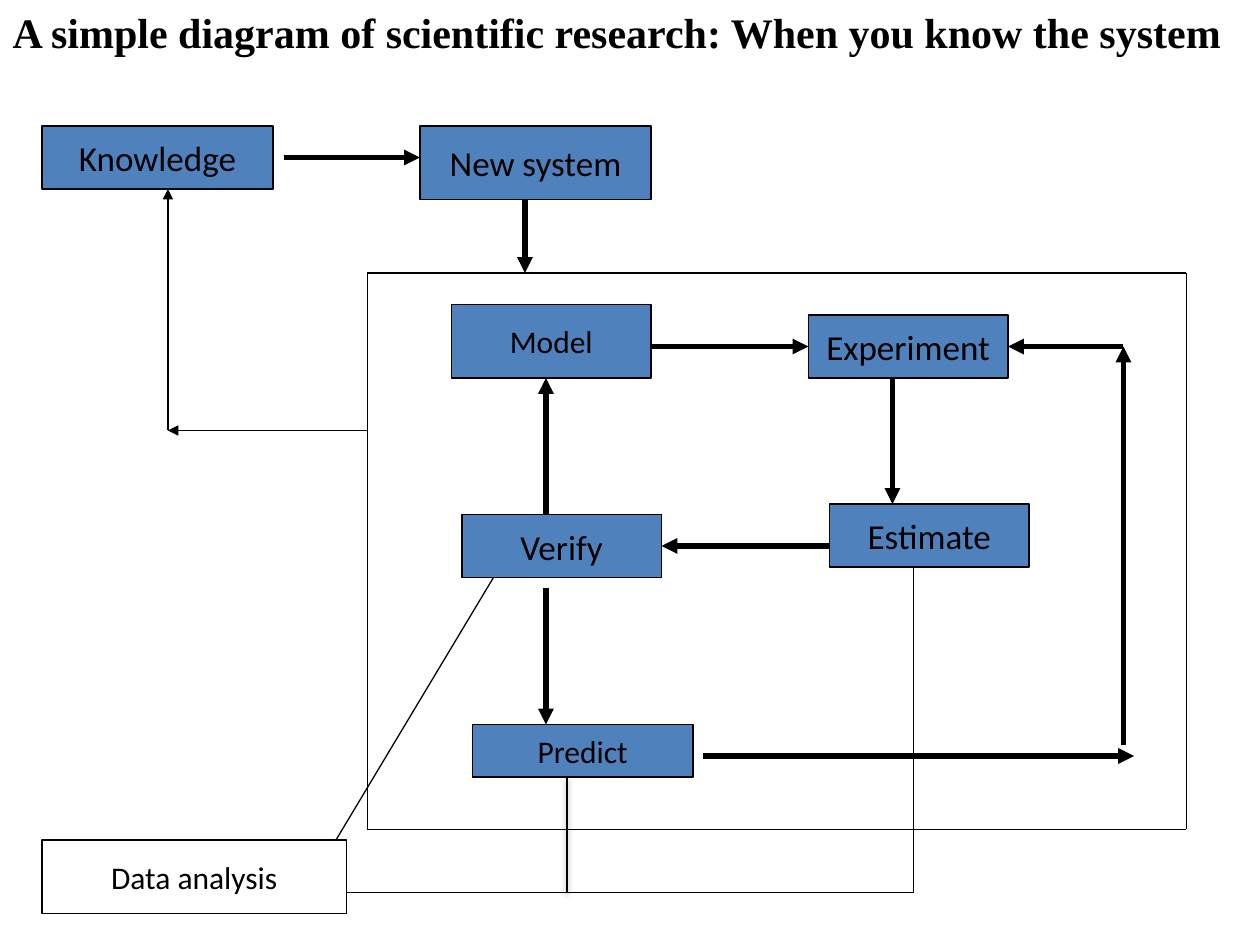
from itertools import pairwise

from lxml.etree import SubElement
from pptx import Presentation
from pptx.dml.color import RGBColor
from pptx.enum.shapes import MSO_CONNECTOR, MSO_SHAPE
from pptx.enum.text import MSO_ANCHOR, MSO_AUTO_SIZE, PP_ALIGN
from pptx.oxml.ns import qn
from pptx.util import Cm, Pt

BLUE, BLACK, WHITE = "4F81BD", "000000", "FFFFFF"
TOP, LEFT, BOTTOM, RIGHT = range(4)


def color(code):
    return RGBColor.from_string(code)


def grid(n):
    """Length of n grid steps, twelve steps to the inch."""
    return Cm(n * 2.54 / 12)


def write(frame, text, size=20, font="Calibri", bold=False,
          align=PP_ALIGN.CENTER, anchor=MSO_ANCHOR.MIDDLE, wrap=False):
    frame.word_wrap = wrap
    frame.vertical_anchor = anchor
    frame.text = text
    para = frame.paragraphs[0]
    para.alignment = align
    style = para.runs[0].font
    style.size, style.name, style.bold = Pt(size), font, bold
    style.color.rgb = color(BLACK)


class Chart:
    thin, thick = 0.75, 3

    def __init__(self, slide):
        self.slide = slide

    def title(self, text):
        shape = self.slide.shapes.title
        shape.left, shape.top = grid(0), grid(0)
        shape.width, shape.height = grid(118), grid(6)
        write(shape.text_frame, text, size=24, font="Times New Roman",
              bold=True, align=PP_ALIGN.LEFT, anchor=MSO_ANCHOR.TOP, wrap=True)
        shape.text_frame.auto_size = MSO_AUTO_SIZE.SHAPE_TO_FIT_TEXT

    def box(self, text, x, y, w, h, size=20, fill=BLUE):
        shape = self.slide.shapes.add_shape(
            MSO_SHAPE.RECTANGLE, grid(x), grid(y), grid(w), grid(h))
        shape.shadow.inherit = False
        shape.fill.solid()
        shape.fill.fore_color.rgb = color(fill)
        shape.line.color.rgb = color(BLACK)
        shape.line.width = Pt(self.thin)
        write(shape.text_frame, text, size=size)
        return shape

    def line(self, start, end, width=thin, head=False, goal=None, shade=False):
        """Straight line; goal is a (box, side) pair to join at the end."""
        link = self.slide.shapes.add_connector(
            MSO_CONNECTOR.STRAIGHT, *map(grid, start + end))
        if goal:
            link.end_connect(*goal)
        link.line.color.rgb = color(BLACK)
        link.line.width = Pt(width)
        props = link._element.spPr
        if head:
            SubElement(props.find(qn("a:ln")), qn("a:tailEnd"), type="triangle")
        effect = SubElement(props, qn("a:effectLst"))
        if shade:
            cast = SubElement(effect, qn("a:outerShdw"), blurRad=str(Pt(3.1)),
                              dist=str(Pt(1.6)), dir="5400000", rotWithShape="0")
            tone = SubElement(cast, qn("a:srgbClr"), val=BLACK)
            SubElement(tone, qn("a:alpha"), val="38000")

    def arrow(self, start, end, goal=None):
        self.line(start, end, self.thick, head=True, goal=goal)


def main():
    deck = Presentation()
    deck.slide_width, deck.slide_height = Cm(25.4), Cm(19.05)
    chart = Chart(deck.slides.add_slide(deck.slide_layouts[5]))
    chart.title("A simple diagram of scientific research: "
                "When you know the system")

    # Steps
    chart.box("Knowledge", 4, 12, 22, 6)
    chart.box("New system", 40, 12, 22, 7)
    chart.box("Model", 43, 29, 19, 7, size=18)
    trial = chart.box("Experiment", 77, 30, 19, 6)
    chart.box("Estimate", 79, 48, 19, 6)
    verify = chart.box("Verify", 44, 49, 19, 6)
    chart.box("Predict", 45, 69, 21, 5, size=18)

    # Main flow
    chart.arrow((27, 15), (40, 15))
    chart.arrow((50, 19), (50, 26))
    chart.arrow((62, 33), (77, 33), goal=(trial, LEFT))
    chart.arrow((85, 36), (85, 48))
    chart.arrow((79, 52), (63, 52), goal=(verify, RIGHT))
    chart.arrow((52, 49), (52, 36))
    chart.arrow((52, 56), (52, 69))

    # Loop from prediction back to experiment
    chart.arrow((67, 72), (108, 72))
    chart.arrow((107, 71), (107, 33))
    chart.arrow((107, 33), (96, 33), goal=(trial, RIGHT))

    # Frame around the research cycle
    frame = [(35, 26), (35, 79), (113, 79), (113, 26), (35, 26)]
    for start, end in pairwise(frame):
        chart.line(start, end)

    # Return to knowledge
    for start, end in pairwise([(35, 41), (16, 41), (16, 18)]):
        chart.line(start, end, head=True)

    # Data analysis and its links
    chart.box("Data analysis", 4, 80, 29, 7, size=18, fill=WHITE)
    chart.line((32, 80), (47, 55))
    for start, end in pairwise([(33, 85), (87, 85), (87, 54)]):
        chart.line(start, end)
    chart.line((54, 85), (54, 74), width=1, shade=True)

    deck.save("out.pptx")


if __name__ == "__main__":
    main()
